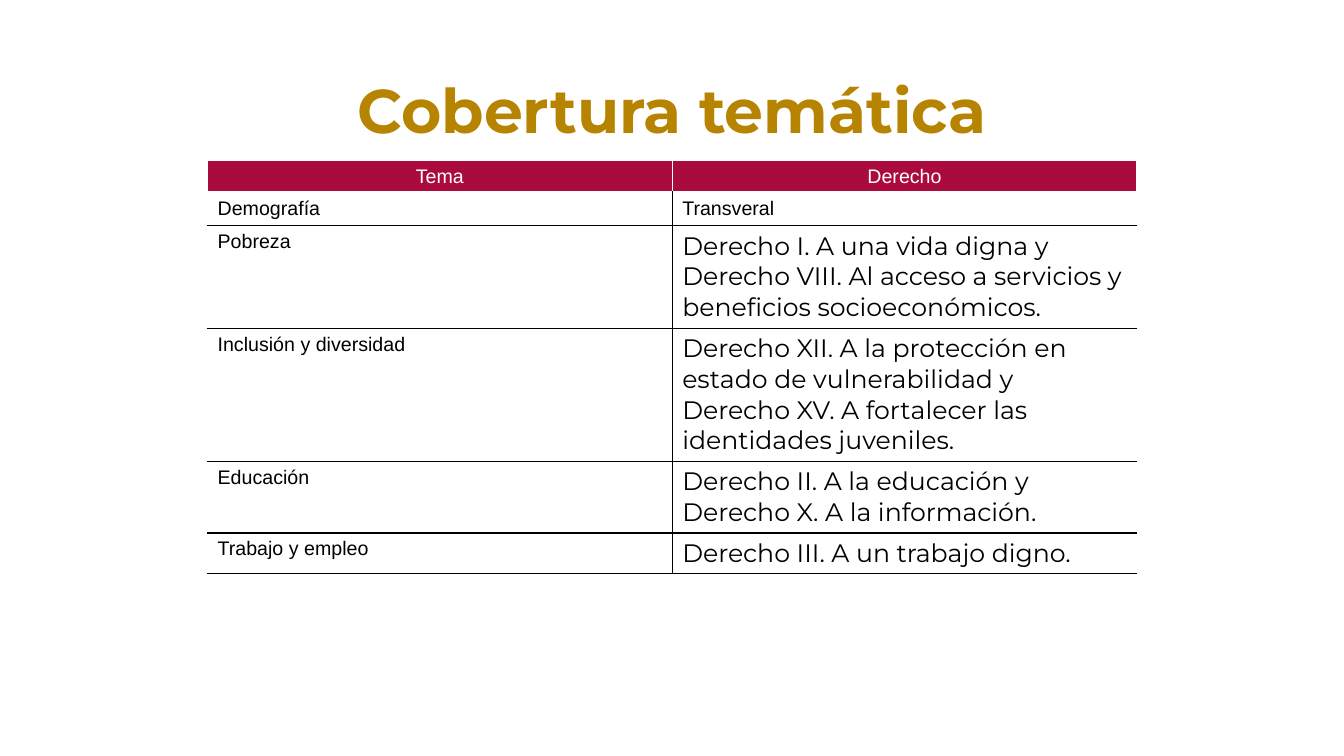
import dataclasses

import pptx
import pptx.util
from lxml import etree
from pptx.dml.color import RGBColor
from pptx.enum.text import MSO_ANCHOR, PP_ALIGN
from pptx.oxml.ns import qn
from pptx.util import Cm


@dataclasses.dataclass(frozen=True)
class Theme:
    gold: str = "B68400"
    crimson: str = "AB0A3D"
    black: str = "000000"
    white: str = "FFFFFF"
    display: str = "Montserrat"
    plain: str = "Arial"
    title: int = 44
    right: int = 18
    label: int = 14


T = Theme()


def write(tf, text, font=T.plain, size=T.label, color=T.black, bold=False,
          align=PP_ALIGN.LEFT, spacing=None):
    p = tf.paragraphs[0]
    p.alignment = align
    p.line_spacing = spacing
    r = p.add_run()
    r.text = text
    r.font.name = font
    r.font.size = pptx.util.Pt(size)
    r.font.bold = bold
    r.font.color.rgb = RGBColor.from_string(color)


def style_cell(cell, fill, borders):
    """Fill a cell and draw its borders, given as side: (colour, points)."""
    tcPr = cell._tc.get_or_add_tcPr()
    for side in "LRTB":
        color, width = borders[side]
        ln = etree.SubElement(tcPr, qn(f"a:ln{side}"), w=str(pptx.util.Pt(width)))
        solid = etree.SubElement(ln, qn("a:solidFill"))
        etree.SubElement(solid, qn("a:srgbClr"), val=color)
    cell.fill.solid()
    cell.fill.fore_color.rgb = RGBColor.from_string(fill)


prs = pptx.Presentation()
prs.slide_width, prs.slide_height = Cm(33.87), Cm(19.05)
s = prs.slides.add_slide(prs.slide_layouts[5])

title = s.shapes.title
title.left, title.top, title.width, title.height = Cm(2.33), Cm(1.02), Cm(29.21), Cm(3.68)
title.text_frame.vertical_anchor = MSO_ANCHOR.MIDDLE
write(title.text_frame, "Cobertura temática", font=T.display, size=T.title,
      color=T.gold, bold=True, align=PP_ALIGN.CENTER, spacing=0.9)

rows = [
    ("Tema", "Derecho"),
    ("Demografía", "Transveral"),
    ("Pobreza", "Derecho I. A una vida digna y Derecho VIII. Al acceso a "
                "servicios y beneficios socioeconómicos."),
    ("Inclusión y diversidad", "Derecho XII. A la protección en estado de vulnerabilidad y "
                               "Derecho XV. A fortalecer las identidades juveniles."),
    ("Educación", "Derecho II. A la educación y Derecho X. A la información."),
    ("Trabajo y empleo", "Derecho III. A un trabajo digno."),
]
table = s.shapes.add_table(len(rows), 2, Cm(5.23), Cm(4.04), Cm(23.42), Cm(5)).table
for col in table.columns:
    col.width = Cm(11.71)

white_line, black_line = (T.white, 1), (T.black, 1)
for i, row in enumerate(rows):
    table.rows[i].height = Cm(0.84 if i else 0.79)
    for j, text in enumerate(row):
        cell = table.cell(i, j)
        if i == 0:
            write(cell.text_frame, text, color=T.white, align=PP_ALIGN.CENTER)
            borders = dict.fromkeys("LRT", white_line) | {"B": (T.white, 3)}
            style_cell(cell, T.crimson, borders)
            continue
        if i > 1 and j == 1:
            write(cell.text_frame, text, font=T.display, size=T.right)
        else:
            write(cell.text_frame, text)
        style_cell(cell, T.white, {
            "L": black_line if j else white_line,
            "R": white_line if j else black_line,
            "T": black_line if i > 1 else white_line,
            "B": black_line,
        })

prs.save("out.pptx")
